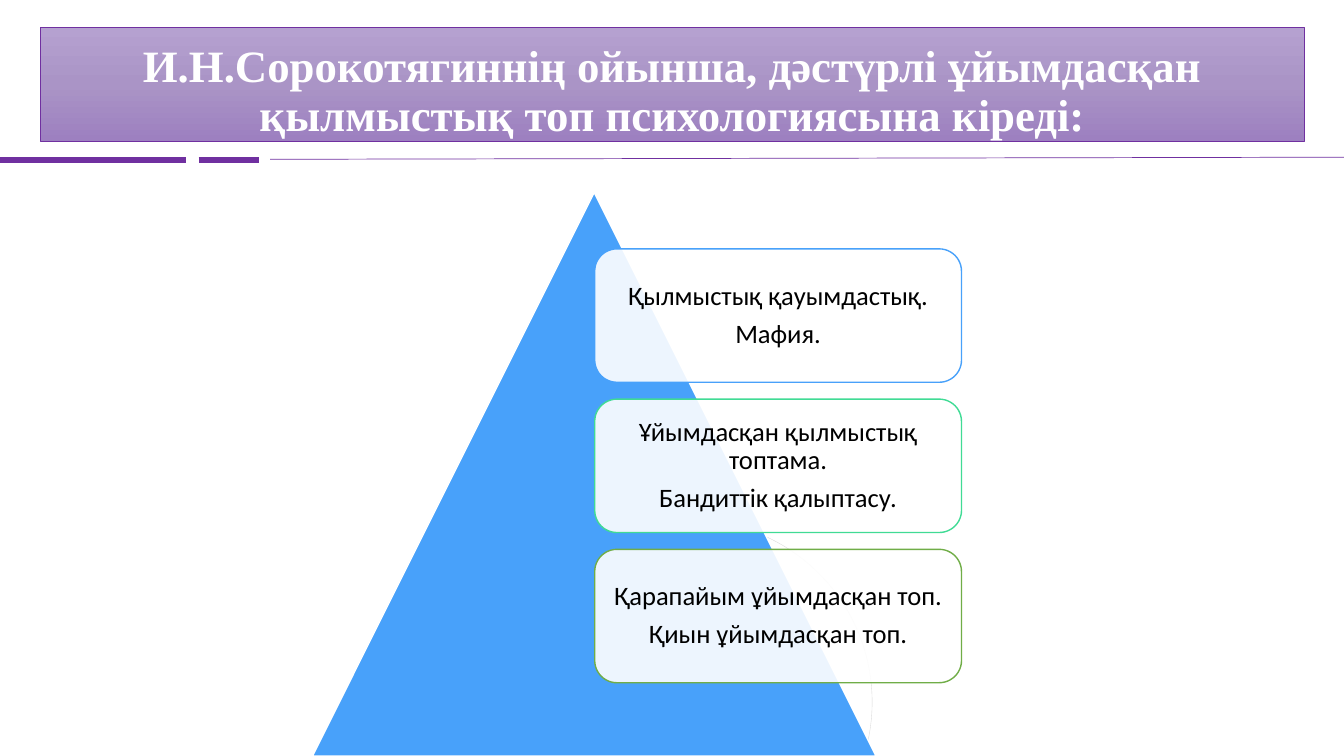
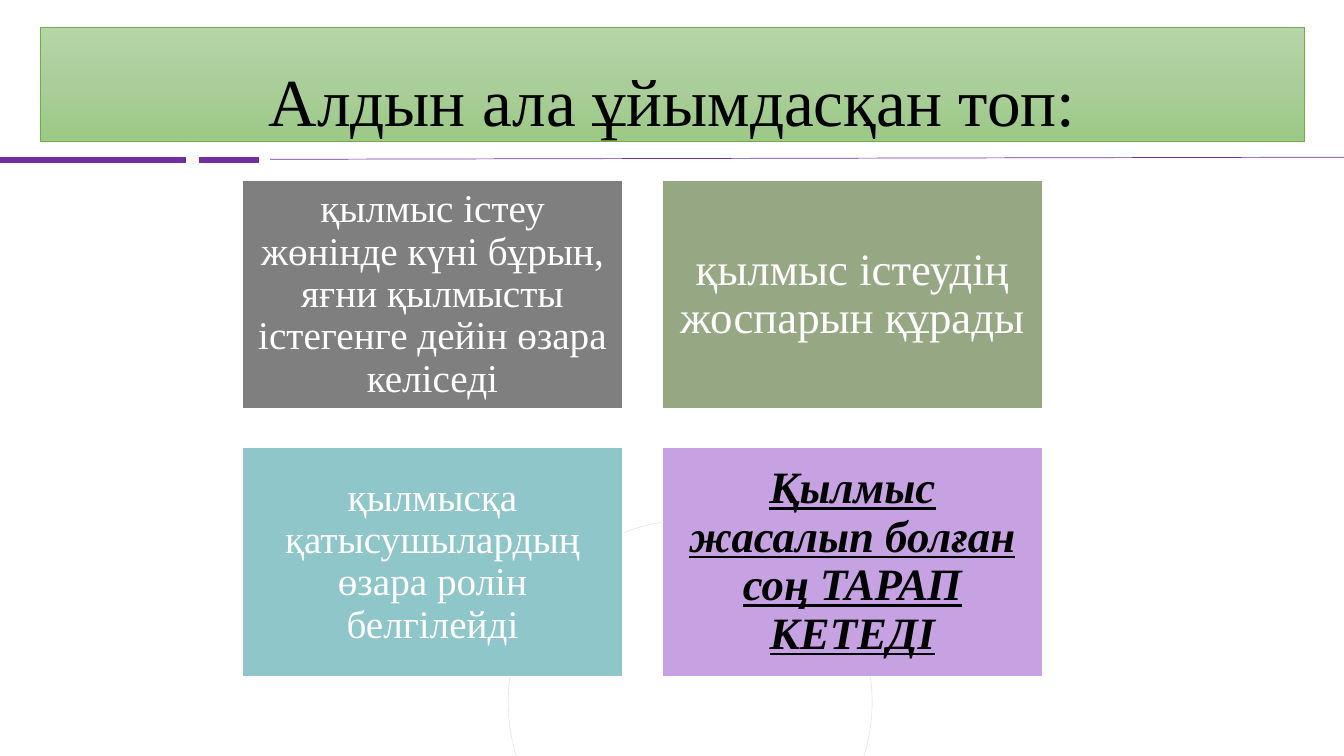
"""Build two slides on the psychology of organised criminal groups."""
from copy import deepcopy
from pptx import Presentation
from pptx.dml.color import RGBColor as RGB
from pptx.enum.shapes import MSO_CONNECTOR as CON, MSO_SHAPE as SHP
from pptx.enum.text import MSO_ANCHOR as ANC, MSO_AUTO_SIZE as FIT, PP_ALIGN as AL
from pptx.oxml import parse_xml
from pptx.oxml.ns import nsdecls
from pptx.util import Pt

HUES = {
    "white": "FFFFFF", "black": "000000", "purple": "7030A0", "ring": "D9D9D9",
    "blue": "48A1FA", "mint": "40DB95", "green": "70AD47",
    "grey": "7F7F7F", "sage": "96A883", "teal": "8EC6CA", "lilac": "C7A2E3",
}
FADES = {
    "purple": ("B5A1D0", "AA94C6", "9D80C0"),
    "green": ("B5D5A7", "AACE9A", "9CC987"),
}
RULES = (
    (0, 114.5, 133.2, 114.5, 4.5),
    (141.8, 114.5, 185, 114.5, 4.5),
    (193, 113.8, 960, 112.3, 0.5),
)
SERIF, SANS = "Times New Roman", "Calibri"


class Deck:
    """Holds the shared style and the current slide."""

    def __init__(self):
        self.prs = Presentation()
        self.prs.slide_width, self.prs.slide_height = Pt(960), Pt(540)
        self.slide = None

    def hue(self, name):
        return RGB.from_string(HUES[name])

    def edge(self, item, name, width):
        item.line.color.rgb = self.hue(name)
        item.line.width = Pt(width)

    def page(self, text, tone, **font):
        self.slide = self.prs.slides.add_slide(self.prs.slide_layouts[5])
        self.title(text, tone, font)
        for rule in RULES:
            self.rule(*rule)
        self.shape(SHP.OVAL, (363, 371.5, 260, 260), None, "ring", 0.25)

    def title(self, text, tone, font):
        box = self.slide.shapes.title
        place = {"left": 28.8, "top": 19.5, "width": 903, "height": 81.3}
        for key, val in place.items():
            setattr(box, key, Pt(val))
        box.fill.gradient()
        box.fill.gradient_angle = 270
        stops = box._element.xpath(".//a:gsLst")[0]
        stops.append(deepcopy(stops[0]))
        for i, (stop, code) in enumerate(zip(box.fill.gradient_stops, FADES[tone])):
            stop.position = i / 2
            stop.color.rgb = RGB.from_string(code)
        self.edge(box, tone, 0.5)
        self.label(box, [text], 0, ANC.BOTTOM, 0, name=SERIF, **font)

    def rule(self, x1, y1, x2, y2, width):
        line = self.slide.shapes.add_connector(
            CON.STRAIGHT, Pt(x1), Pt(y1), Pt(x2), Pt(y2))
        self.edge(line, "purple", width)
        line._element.spPr.append(parse_xml(f"<a:effectLst {nsdecls('a')}/>"))

    def shape(self, kind, at, fill, edge, width=1, alpha=None):
        item = self.slide.shapes.add_shape(kind, *map(Pt, at))
        item.shadow.inherit = False
        if fill:
            item.fill.solid()
            item.fill.fore_color.rgb = self.hue(fill)
        else:
            item.fill.background()
        if alpha:
            tint = item._element.spPr.xpath("./a:solidFill/a:srgbClr")[0]
            tint.append(parse_xml(f'<a:alpha {nsdecls("a")} val="{alpha * 1000}"/>'))
        self.edge(item, edge, width)
        return item

    def label(self, item, lines, pad, anchor=ANC.MIDDLE, gap=6.5, *,
              size, color, **font):
        frame = item.text_frame
        form = {"word_wrap": True, "auto_size": FIT.NONE, "vertical_anchor": anchor}
        form.update({f"margin_{side}": Pt(pad)
                     for side in ("left", "top", "right", "bottom")})
        for key, val in form.items():
            setattr(frame, key, val)
        for i, text in enumerate(lines):
            para = frame.add_paragraph() if i else frame.paragraphs[0]
            style = {"alignment": AL.CENTER, "line_spacing": 0.9,
                     "space_before": Pt(0), "space_after": Pt(gap)}
            for key, val in style.items():
                setattr(para, key, val)
            run = para.add_run()
            run.text = text
            for key, val in {"size": Pt(size), **font}.items():
                setattr(run.font, key, val)
            run.font.color.rgb = self.hue(color)


def groups(deck):
    """Draw the pyramid of group kinds."""
    deck.page("И.Н.Сорокотягиннің ойынша, дәстүрлі ұйымдасқан "
              "қылмыстық топ психологиясына кіреді:",
              "purple", size=32, color="white", bold=True)
    deck.shape(SHP.ISOSCELES_TRIANGLE, (223.2, 137.5, 402.5, 402.5), "blue", "white")
    tiers = (
        ("blue", ("Қылмыстық қауымдастық.", "Мафия.")),
        ("mint", ("Ұйымдасқан қылмыстық топтама.", "Бандиттік қалыптасу.")),
        ("green", ("Қарапайым ұйымдасқан топ.", "Қиын ұйымдасқан топ.")),
    )
    for i, (edge, lines) in enumerate(tiers):
        at = (424.8, 177.8 + 107.3 * i, 262, 95.3)
        card = deck.shape(SHP.ROUNDED_RECTANGLE, at, "white", edge, alpha=90)
        deck.label(card, lines, 1.2, size=19, color="black", name=SANS)


def steps(deck):
    """Draw the grid of what the group does."""
    deck.page("Алдын ала ұйымдасқан топ:", "green", size=48, color="black", bold=False)
    plain = {"size": 28, "color": "white"}
    large = {**plain, "size": 32}
    stress = {"size": 32, "color": "black", "bold": True, "italic": True,
              "underline": True}
    tiles = (
        ("grey", plain, "қылмыс істеу жөнінде күні бұрын, яғни қылмысты "
                        "істегенге дейін өзара келіседі"),
        ("sage", large, "қылмыс істеудің жоспарын құрады"),
        ("teal", plain, "қылмысқа қатысушылардың өзара ролін белгілейді"),
        ("lilac", stress, "Қылмыс жасалып болған соң ТАРАП КЕТЕДІ"),
    )
    for i, (fill, font, text) in enumerate(tiles):
        row, col = divmod(i, 2)
        at = (172.8 + 300 * col, 128.9 + 190.8 * row, 272.2, 163.4)
        tile = deck.shape(SHP.RECTANGLE, at, fill, "white")
        deck.label(tile, [text], 9, name=SERIF, **font)


def main():
    """Build and save the deck."""
    deck = Deck()
    groups(deck)
    steps(deck)
    deck.prs.save("out.pptx")


if __name__ == "__main__":
    main()
